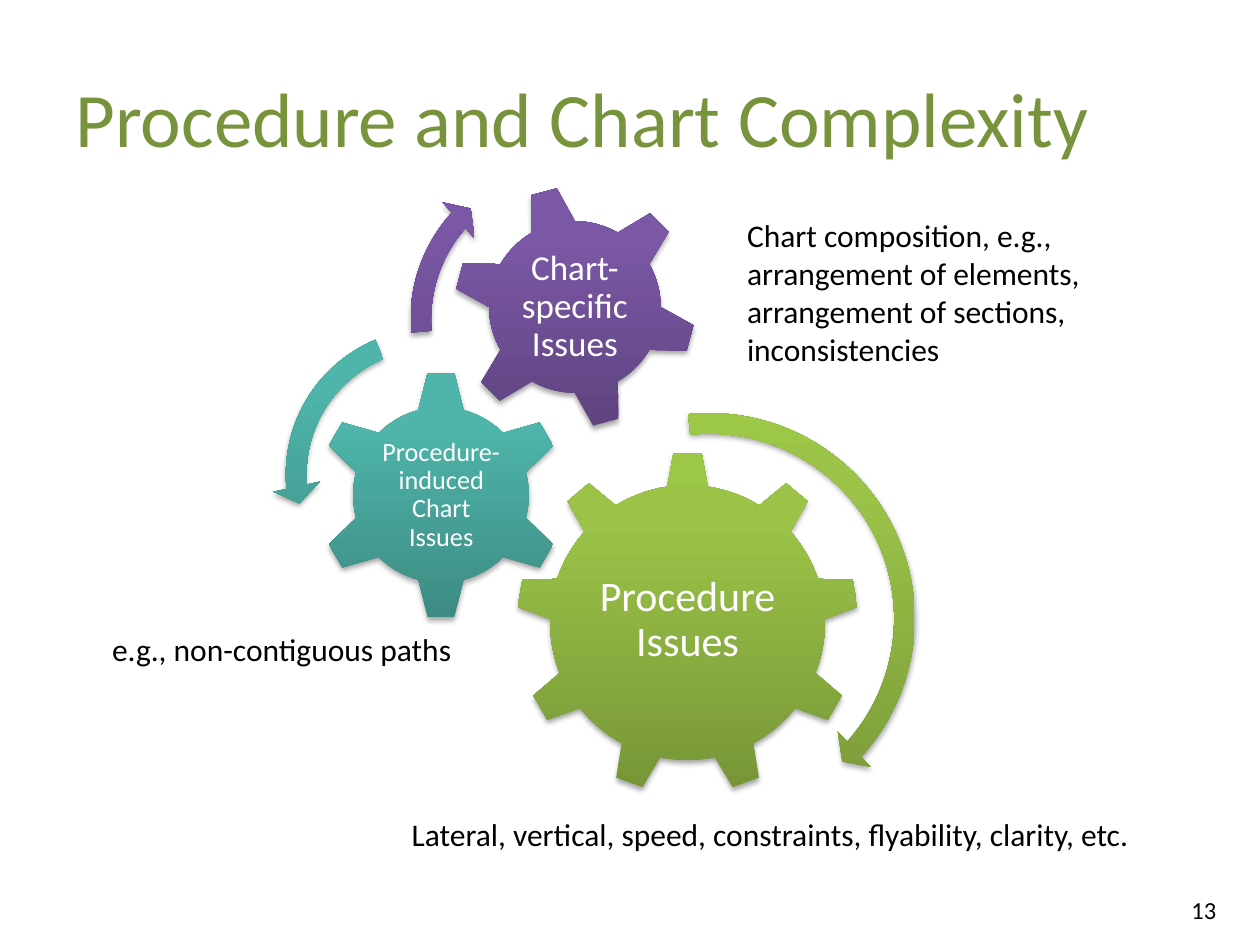
from math import atan, cos, degrees, hypot, radians, sin, tan

from pptx import Presentation
from pptx.dml.color import RGBColor
from pptx.enum.shapes import MSO_SHAPE
from pptx.enum.text import MSO_ANCHOR, MSO_AUTO_SIZE, PP_ALIGN
from pptx.oxml import parse_xml
from pptx.oxml.ns import nsdecls, qn
from pptx.util import Cm, Pt

LEFT, CENTER, RIGHT = PP_ALIGN.LEFT, PP_ALIGN.CENTER, PP_ALIGN.RIGHT
TOP, MIDDLE = MSO_ANCHOR.TOP, MSO_ANCHOR.MIDDLE
GROW = MSO_AUTO_SIZE.SHAPE_TO_FIT_TEXT
CLOCKWISE, COUNTER = MSO_SHAPE.CIRCULAR_ARROW, MSO_SHAPE.LEFT_CIRCULAR_ARROW

# Lengths are centimetres, angles are degrees.
TITLE = "Procedure and Chart Complexity"
NUMBER = "13"

# Gradient colours from the bottom up, at 0, 80 and 100 percent
GREEN = ("779737", "9BC348", "9DC746")
TEAL = ("3D8C83", "4FB5AA", "4EB8AC")
PURPLE = ("5F4480", "7B58A6", "7C57A8")

GEARS = [
    dict(text="Procedure Issues", size=24, hues=GREEN, teeth=9, turn=0,
         mid=(13.86, 12.55), body=2.77, rim=3.44, base=8.5, tip=4.7,
         area=(11.88, 10.82, 3.96, 3.38)),
    dict(text="Procedure-induced Chart Issues", size=15, hues=TEAL, teeth=6, turn=0,
         mid=(8.89, 9.98), body=1.77, rim=2.47, base=15, tip=6.3,
         area=(7.7, 8.79, 2.39, 2.39)),
    dict(text="Chart- specific Issues", size=20, hues=PURPLE, teeth=6, turn=-15,
         mid=(11.59, 6.19), body=1.73, rim=2.42, base=15, tip=6.3,
         area=(10.27, 4.87, 2.64, 2.64)),
]

# Kind, left, top, side, adjustments in percent, colours
ARROWS = [
    (CLOCKWISE, 9.88, 8.05, 8.84, (4.7, 299, 2523.6, 15845.4, 5.5), GREEN),
    (COUNTER, 5.49, 6.35, 6.43, (6.5, 430, 10489.1, 14837.8, 7.5), TEAL),
    (CLOCKWISE, 8, 2.97, 6.93, (6, 394.1, 13313.8, 10508.2, 7), PURPLE),
]

# Text, box, wraps
NOTES = [
    ("e.g., non-contiguous paths", (2.01, 12.57, 8.05, 1.02), True),
    ("Chart composition, e.g., arrangement of elements, "
     "arrangement of sections, inconsistencies", (14.81, 4.24, 7.82, 3.33), True),
    ("Lateral, vertical, speed, constraints, flyability, clarity, etc.",
     (8.05, 16.31, 15.14, 1.02), False),
]


def color(code):
    return RGBColor.from_string(code)


def write(frame, text, size, hue="000000", align=LEFT, anchor=TOP):
    frame.vertical_anchor = anchor
    par = frame.paragraphs[0]
    par.alignment = align
    run = par.add_run()
    run.text = text
    run.font.size = Pt(size)
    run.font.name = "Calibri"
    run.font.color.rgb = color(hue)
    return par


def shade(shape, hues):
    """Give a shape its upward gradient and soft shadow, with no outline."""
    shape.line.fill.background()
    shape.fill.background()
    stops = "".join(
        f'<a:gs pos="{pos * 1000}"><a:srgbClr val="{hue}"/></a:gs>'
        for pos, hue in zip((0, 80, 100), hues))
    props = shape._element.spPr
    props.replace(props.find(qn("a:noFill")), parse_xml(
        f'<a:gradFill {nsdecls("a")}><a:gsLst>{stops}</a:gsLst>'
        '<a:lin ang="16200000" scaled="0"/></a:gradFill>'))
    shape.shadow.inherit = False
    props.find(qn("a:effectLst")).append(parse_xml(
        f'<a:outerShdw {nsdecls("a")} blurRad="{Pt(3.1)}" dist="{Pt(1.8)}" '
        'dir="5400000" rotWithShape="0"><a:srgbClr val="000000">'
        '<a:alpha val="35000"/></a:srgbClr></a:outerShdw>'))


def outline(gear):
    """Return the corners of a gear and the handles of each arc, clockwise."""
    base, tip, body, rim = (gear[key] for key in ("base", "tip", "body", "rim"))
    pitch = 360 / gear["teeth"]
    pull = 4 / 3 * tan(radians(pitch - 2 * base) / 4)
    lean, reach = degrees(atan(pull)), body * hypot(1, pull)
    x, y = gear["mid"]

    def spot(angle, dist):
        turn = radians(gear["turn"] + angle)
        return Cm(x + dist * sin(turn)), Cm(y - dist * cos(turn))

    corners, handles = [], []
    for tooth in range(gear["teeth"]):
        at = tooth * pitch
        corners += [spot(at - base, body), spot(at - tip, rim),
                    spot(at + tip, rim), spot(at + base, body)]
        handles.append((spot(at + base + lean, reach),
                        spot(at + pitch - base - lean, reach)))
    return corners, handles


def bend(shape, handles):
    """Turn every fourth side, from tooth to tooth, into a curve."""
    sides = list(shape._element.iter(qn("a:lnTo")))
    for side, pair in zip(sides[3::4], handles):
        points = "".join(f'<a:pt x="{x - shape.left}" y="{y - shape.top}"/>'
                         for x, y in pair)
        curve = parse_xml(f'<a:cubicBezTo {nsdecls("a")}>{points}</a:cubicBezTo>')
        curve.append(side[0])
        side.getparent().replace(side, curve)


def add_gear(shapes, gear):
    corners, handles = outline(gear)
    pen = shapes.build_freeform(*corners[0])
    pen.add_line_segments(corners[1:] + corners[:1], close=True)
    shape = pen.convert_to_shape()
    bend(shape, handles)
    shade(shape, gear["hues"])
    frame = shape.text_frame
    frame.word_wrap = True
    left, top, width, height = map(Cm, gear["area"])
    frame.margin_left = left - shape.left
    frame.margin_top = top - shape.top
    frame.margin_right = shape.left + shape.width - left - width
    frame.margin_bottom = shape.top + shape.height - top - height
    par = write(frame, gear["text"], gear["size"], "FFFFFF", CENTER, MIDDLE)
    par.line_spacing = 0.9


def main():
    deck = Presentation()
    deck.slide_width, deck.slide_height = Cm(25.4), Cm(19.05)
    slide = deck.slides.add_slide(deck.slide_layouts[5])
    shapes = slide.shapes

    title = shapes.title
    title.left, title.top, title.width, title.height = map(Cm, (1.27, 0.76, 22.86, 3.18))
    write(title.text_frame, TITLE, 44, "77933C", anchor=MIDDLE)

    for gear in GEARS:
        add_gear(shapes, gear)

    for kind, left, top, side, bends, hues in ARROWS:
        arrow = shapes.add_shape(kind, Cm(left), Cm(top), Cm(side), Cm(side))
        for i, value in enumerate(bends):
            arrow.adjustments[i] = value / 100
        shade(arrow, hues)

    for text, box, wraps in NOTES:
        frame = shapes.add_textbox(*map(Cm, box)).text_frame
        frame.word_wrap = wraps
        frame.auto_size = GROW
        write(frame, text, 18)

    page = shapes.add_textbox(*map(Cm, (18.85, 17.83, 5.92, 1.02))).text_frame
    page.word_wrap = True
    write(page, NUMBER, 14, align=RIGHT, anchor=MIDDLE)

    deck.save("out.pptx")


if __name__ == "__main__":
    main()
